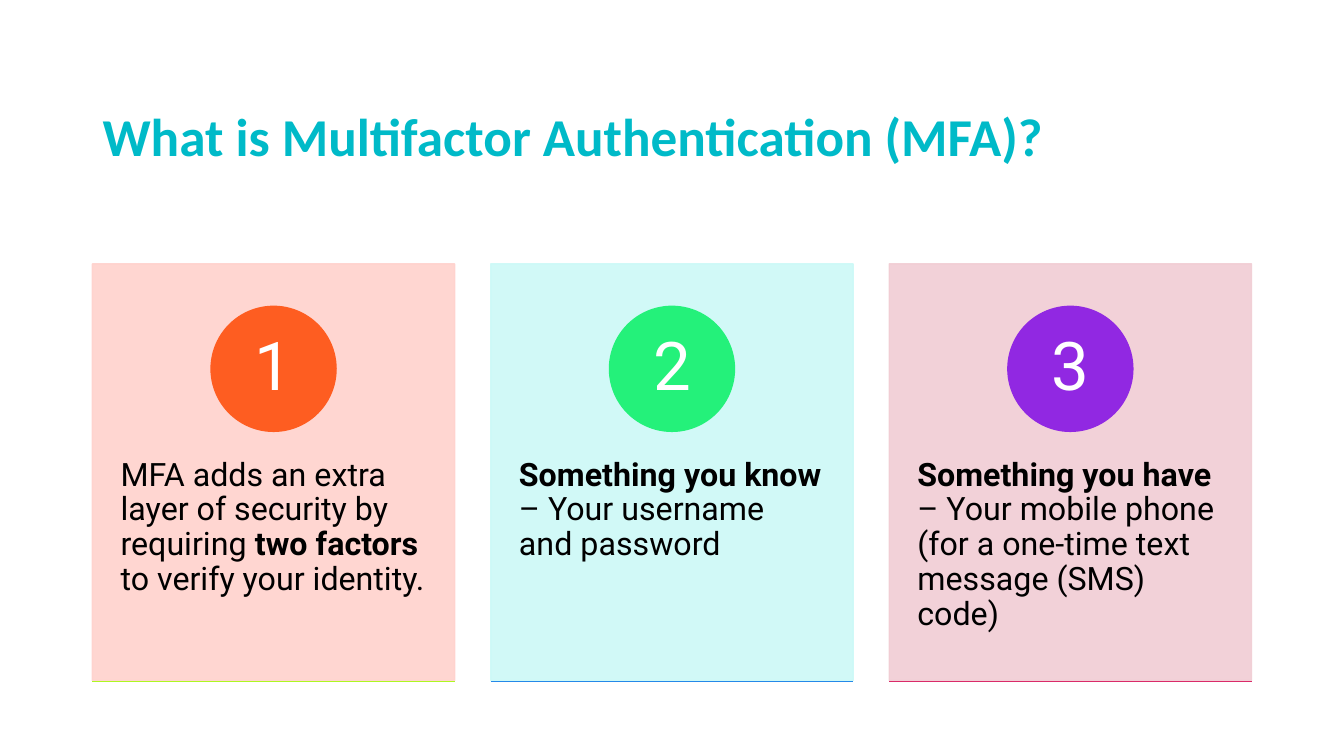
from pptx import Presentation
from pptx.dml.color import RGBColor as RGB
from pptx.enum.shapes import MSO_CONNECTOR as Link, MSO_SHAPE as Shape
from pptx.enum.text import MSO_ANCHOR as Anchor, PP_ALIGN as Align
from pptx.oxml.ns import qn
from pptx.util import Cm, Pt

LEFT, TOP, WIDE, HIGH = 2.33, 6.65, 9.13, 10.5
STEP = 10.04
DISC = 3.15
CARDS = [
    ("FFD2CD", "FE5D21", "AEF722",
     [("MFA adds an extra layer of security by requiring ", False),
      ("two factors", True), (" to verify your identity.", False)]),
    ("CCF9F7", "24F17A", "2589E9",
     [("Something you know", True),
      (" – Your username and password", False)]),
    ("F1CDD4", "9128E2", "DA2A69",
     [("Something you have", True),
      (" – Your mobile phone (for a one-time text message (SMS) code)", False)]),
]


def paint(part, tone):
    part.solid()
    part.fore_color.rgb = RGB.from_string(tone)


def style(run, face, size, tone, bold=False):
    font = run.font
    font.name, font.size, font.bold = face, Pt(size), bold
    font.color.rgb = RGB.from_string(tone)


def inset(frame, side, top, base):
    frame.word_wrap = True
    frame.margin_left = frame.margin_right = Cm(side)
    frame.margin_top, frame.margin_bottom = Cm(top), Cm(base)


def add_form(slide, kind, x, y, wide, high, tone):
    form = slide.shapes.add_shape(kind, Cm(x), Cm(y), Cm(wide), Cm(high))
    form.shadow.inherit = False
    paint(form.fill, tone)
    paint(form.line.fill, tone)
    form.line.width = Pt(1)
    return form


def fade(form, share):
    for tint in form._element.spPr.iter(qn("a:srgbClr")):
        alpha = tint.makeelement(qn("a:alpha"), {"val": str(share * 1000)})
        tint.append(alpha)


def add_card(slide, x, tone, parts):
    card = add_form(slide, Shape.RECTANGLE, x, TOP, WIDE, HIGH, tone)
    fade(card, 90)
    frame = card.text_frame
    inset(frame, 0.71, 4.9, 0.9)
    frame.vertical_anchor = Anchor.TOP
    para = frame.paragraphs[0]
    para.alignment = Align.LEFT
    para.line_spacing = 0.9
    for words, bold in parts:
        run = para.add_run()
        run.text = words
        style(run, "Roboto", 23, "000000", bold)


def add_disc(slide, x, tone, mark):
    disc = add_form(slide, Shape.OVAL, x, 7.72, DISC, DISC, tone)
    frame = disc.text_frame
    inset(frame, 0.25, 0.03, 0.03)
    frame.vertical_anchor = Anchor.MIDDLE
    frame.text = mark
    para = frame.paragraphs[0]
    para.alignment = Align.CENTER
    para.line_spacing = 0.9
    style(para.runs[0], "Roboto", 48, "FFFFFF")


def add_rule(slide, x, tone):
    y = Cm(17.17)
    rule = slide.shapes.add_connector(Link.STRAIGHT, Cm(x), y, Cm(x + WIDE), y)
    paint(rule.line.fill, tone)
    rule.line.width = Pt(1)
    props = rule._element.spPr
    props.append(props.makeelement(qn("a:effectLst"), {}))


def set_title(slide, words):
    title = slide.shapes.title
    title.left, title.top = Cm(LEFT), Cm(1.01)
    title.width, title.height = Cm(29.21), Cm(4.98)
    frame = title.text_frame
    frame.text = words
    frame.word_wrap = True
    frame.vertical_anchor = Anchor.MIDDLE
    para = frame.paragraphs[0]
    para.alignment = Align.LEFT
    para.line_spacing = 0.9
    style(para.runs[0], "Calibri", 38, "00BAC8", True)


def main():
    deck = Presentation()
    deck.slide_width, deck.slide_height = Cm(33.87), Cm(19.05)
    slide = deck.slides.add_slide(deck.slide_layouts[5])
    set_title(slide, "What is Multifactor Authentication (MFA)?")
    for i, (back, spot, base, parts) in enumerate(CARDS):
        x = LEFT + i * STEP
        add_card(slide, x, back, parts)
        add_disc(slide, x + (WIDE - DISC) / 2, spot, str(i + 1))
        add_rule(slide, x, base)
    deck.save("out.pptx")


if __name__ == "__main__":
    main()
